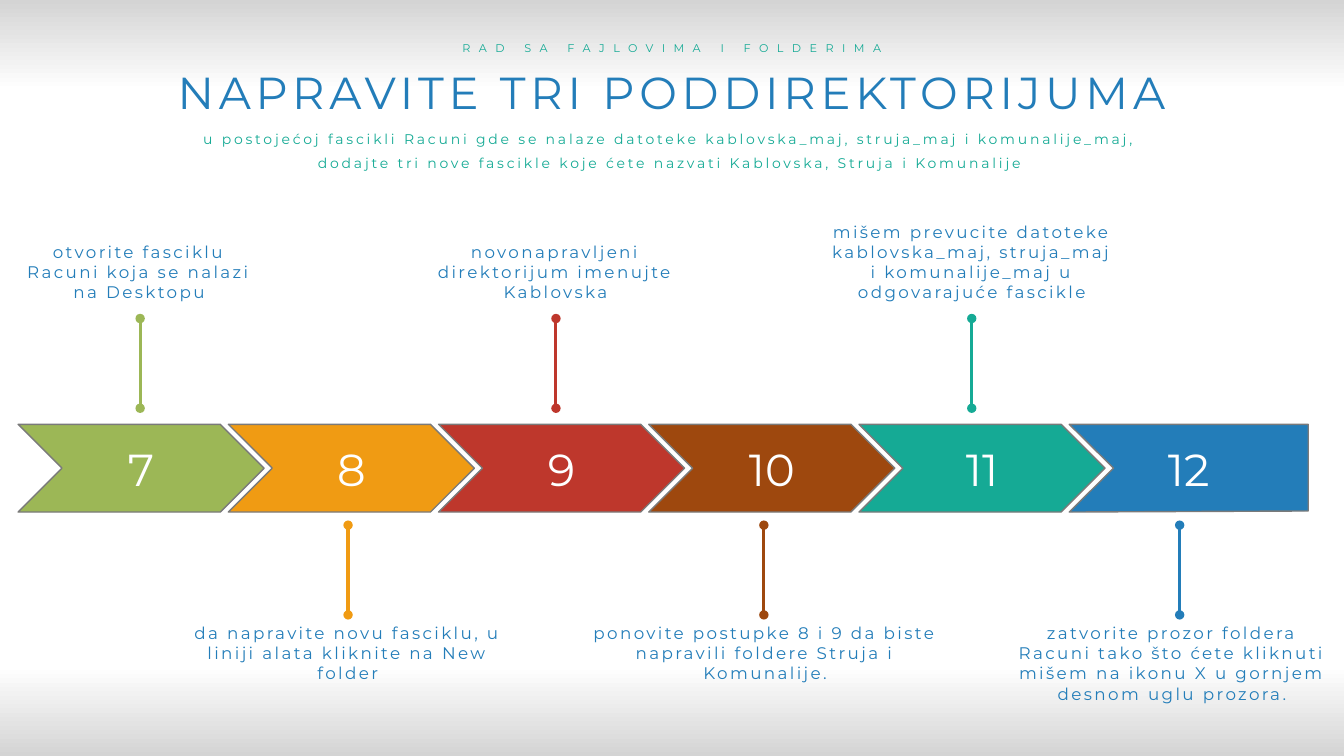
"""Build the timeline slide with six numbered steps."""
from lxml.etree import SubElement
from pptx import Presentation
from pptx.dml.color import RGBColor
from pptx.enum.shapes import MSO_CONNECTOR, MSO_SHAPE
from pptx.enum.text import MSO_ANCHOR, MSO_AUTO_SIZE, PP_ALIGN
from pptx.oxml.ns import qn
from pptx.util import Pt

PX = 9144
FONT = "Montserrat"
BLUE = RGBColor(0x23, 0x7D, 0xB9)
TEAL = RGBColor(0x15, 0xAA, 0x95)
GREEN = RGBColor(0x9C, 0xB7, 0x56)
ORANGE = RGBColor(0xF0, 0x9B, 0x13)
RED = RGBColor(0xBE, 0x37, 0x2C)
BROWN = RGBColor(0x9E, 0x48, 0x0E)
GRAY = RGBColor(0x7A, 0x7A, 0x7A)
SILVER = RGBColor(0xD4, 0xD4, 0xD4)
WHITE = RGBColor(0xFF, 0xFF, 0xFF)

ARROW_LEFT, ARROW_TOP, ARROW_WIDTH, ARROW_HEIGHT = 18, 421, 244, 87
ARROW_STEP = 208.5
LAST_WIDTH, NOTCH = 237, 44
PIN_LEFT, PIN_STEP, PIN_LENGTH = 139, 206.2, 89

STEPS = [
    (GREEN, (6, 235, 264, 71), "otvorite fasciklu Racuni koja se nalazi na Desktopu"),
    (ORANGE, (167, 613, 356, 71),
     "da napravite novu fasciklu, u liniji alata kliknite na New folder"),
    (RED, (399, 235, 304, 71), "novonapravljeni direktorijum imenujte Kablovska"),
    (BROWN, (571, 613, 376, 71),
     "ponovite postupke 8 i 9 da biste napravili foldere Struja i Komunalije."),
    (TEAL, (812, 215, 304, 91),
     "mišem prevucite datoteke kablovska_maj, struja_maj i komunalije_maj u "
     "odgovarajuće fascikle"),
    (BLUE, (993, 613, 339, 91),
     "zatvorite prozor foldera Racuni tako što ćete kliknuti mišem na ikonu X "
     "u gornjem desnom uglu prozora."),
]


def write(shape, text, size, color, spacing=0):
    shape.text_frame.text = text
    paragraph = shape.text_frame.paragraphs[0]
    paragraph.alignment = PP_ALIGN.CENTER
    run = paragraph.runs[0]
    run.font.name = FONT
    run.font.size = Pt(size)
    run.font.color.rgb = color
    if spacing:
        run.font._element.set("spc", str(spacing))
    return paragraph


def add_text(box, text, size, color, spacing, wrap=True):
    shape = slide.shapes.add_textbox(*(value * PX for value in box))
    shape.text_frame.word_wrap = wrap
    shape.text_frame.auto_size = MSO_AUTO_SIZE.SHAPE_TO_FIT_TEXT
    return write(shape, text, size, color, spacing)


presentation = Presentation()
presentation.slide_width = 1333 * PX
presentation.slide_height = 750 * PX
slide = presentation.slides.add_slide(presentation.slide_layouts[6])

background = slide.background.fill
background.gradient()
background.gradient_angle = 270
stops = slide.element.find(".//" + qn("a:gsLst"))
stops.clear()
for percent, color in [(0, SILVER), (12, WHITE), (88, WHITE), (100, SILVER)]:
    stop = SubElement(stops, qn("a:gs"), pos=str(percent * 1000))
    SubElement(stop, qn("a:srgbClr"), val=str(color))

add_text((164, 59, 1005, 64), "NAPRAVITE TRI PODDIREKTORIJUMA", 32, BLUE, 340)
add_text((444, 36, 445, 24), "RAD SA FAJLOVIMA I FOLDERIMA", 8, TEAL, 600, wrap=False)
subtitle = add_text(
    (180, 118, 968, 58),
    "u postojećoj fascikli Racuni gde se nalaze datoteke kablovska_maj, struja_maj "
    "i komunalije_maj, dodajte tri nove fascikle koje ćete nazvati Kablovska, "
    "Struja i Komunalije",
    10, TEAL, 200)
subtitle.line_spacing = Pt(17)

for index, (color, box, text) in enumerate(STEPS):
    add_text(box, text, 12, BLUE, 170)

    pin_x = round((PIN_LEFT + index * PIN_STEP) * PX)
    pin_top = 521 if index % 2 else 316
    pin = slide.shapes.add_connector(
        MSO_CONNECTOR.STRAIGHT, pin_x, pin_top * PX, pin_x, (pin_top + PIN_LENGTH) * PX)
    pin.line.color.rgb = color
    pin.line.width = Pt(2.25)
    pin_line = pin.line._get_or_add_ln()
    for end in ("a:headEnd", "a:tailEnd"):
        SubElement(pin_line, qn(end), type="oval")
    SubElement(pin._element.spPr, qn("a:effectLst"))

for index, (color, box, text) in enumerate(STEPS):
    left = round((ARROW_LEFT + index * ARROW_STEP) * PX)
    top, height = ARROW_TOP * PX, ARROW_HEIGHT * PX
    if index < len(STEPS) - 1:
        arrow = slide.shapes.add_shape(
            MSO_SHAPE.CHEVRON, left, top, ARROW_WIDTH * PX, height)
    else:
        right = left + LAST_WIDTH * PX
        outline = slide.shapes.build_freeform(left, top)
        outline.add_line_segments([
            (right, top), (right, top + height - PX), (left, top + height),
            (left + NOTCH * PX, top + height // 2)])
        arrow = outline.convert_to_shape()
    arrow.shadow.inherit = False
    arrow.fill.solid()
    arrow.fill.fore_color.rgb = color
    arrow.line.color.rgb = GRAY
    arrow.line.width = Pt(1)
    arrow.text_frame.vertical_anchor = MSO_ANCHOR.MIDDLE
    write(arrow, str(index + 7), 32, WHITE)

presentation.save("out.pptx")
